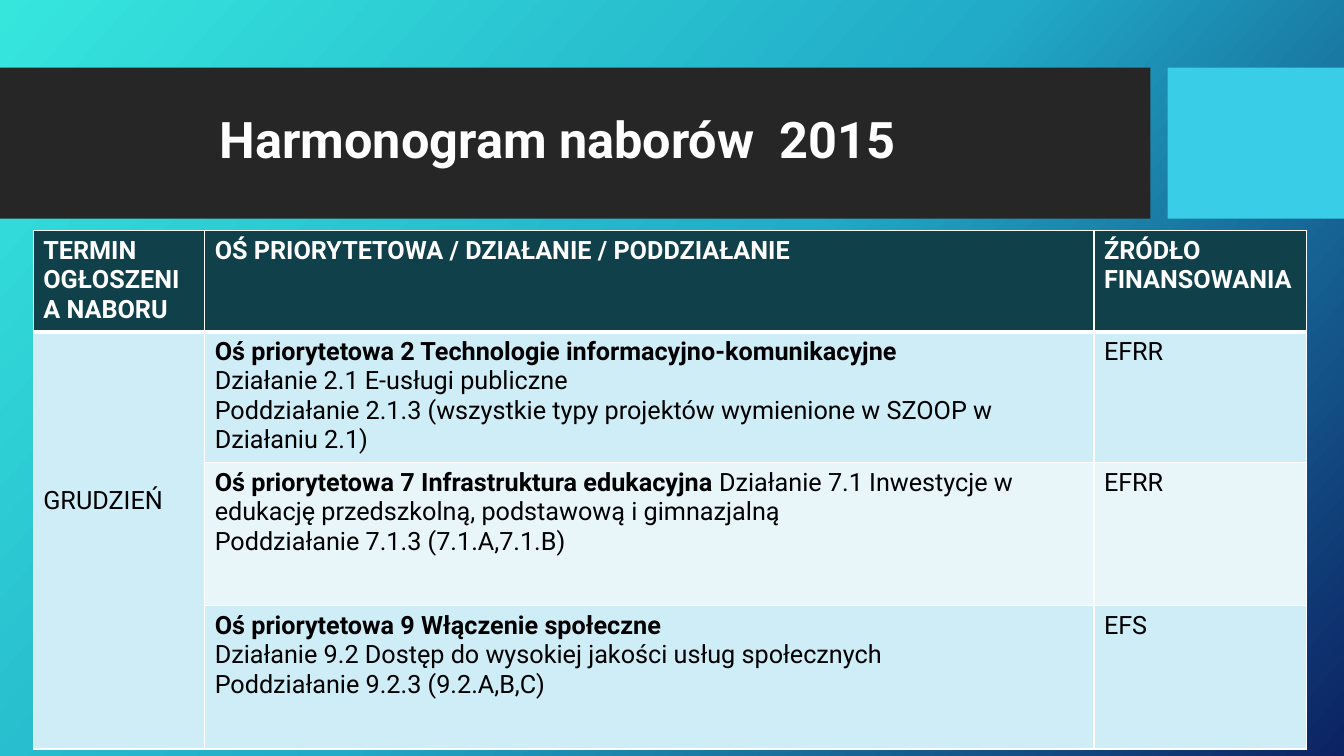
from copy import deepcopy
from dataclasses import dataclass

from lxml.etree import SubElement
from pptx import Presentation
from pptx.dml.color import RGBColor
from pptx.enum.shapes import MSO_SHAPE
from pptx.enum.text import MSO_ANCHOR
from pptx.oxml import parse_xml
from pptx.oxml.ns import nsdecls, qn
from pptx.slide import Slide
from pptx.table import _Cell as Cell
from pptx.util import Inches, Pt

FONT = "Roboto"
WHITE = RGBColor(0xFF, 0xFF, 0xFF)
BLACK = RGBColor(0x00, 0x00, 0x00)
CHARCOAL = RGBColor(0x26, 0x26, 0x26)
CYAN = RGBColor(0x39, 0xCD, 0xE7)
DARK_TEAL = RGBColor(0x10, 0x40, 0x4A)
LIGHT_BLUE = RGBColor(0xCE, 0xED, 0xF6)
PALE_BLUE = RGBColor(0xE8, 0xF6, 0xFA)
BACKGROUND_STOPS = [
    (0, RGBColor(0x36, 0xE6, 0xDD)),
    (0.5, RGBColor(0x21, 0xAB, 0xC8)),
    (1, RGBColor(0x0C, 0x22, 0x63)),
]


@dataclass
class Band:
    left: float
    width: float
    color: RGBColor


@dataclass
class Call:
    axis: str
    action: str
    subaction: str
    source: str
    height: float
    color: RGBColor
    action_on_axis_line: bool = False


BANDS = [Band(0, 11.41, CHARCOAL), Band(11.58, 1.75, CYAN)]
HEADINGS = [
    "TERMIN OGŁOSZENIA NABORU",
    "OŚ PRIORYTETOWA / DZIAŁANIE / PODDZIAŁANIE",
    "ŹRÓDŁO FINANSOWANIA",
]
COLUMN_WIDTHS = [1.7, 8.82, 2.11]
HEADING_HEIGHT = 0.71
CALLS = [
    Call("Oś priorytetowa 2 Technologie informacyjno-komunikacyjne",
         "Działanie 2.1 E-usługi publiczne",
         "Poddziałanie 2.1.3 (wszystkie typy projektów wymienione w SZOOP w Działaniu 2.1)",
         "EFRR", 1.02, LIGHT_BLUE),
    Call("Oś priorytetowa 7 Infrastruktura edukacyjna ",
         "Działanie 7.1 Inwestycje w edukację przedszkolną, podstawową i gimnazjalną",
         "Poddziałanie 7.1.3 (7.1.A,7.1.B)",
         "EFRR", 1.42, PALE_BLUE, action_on_axis_line=True),
    Call("Oś priorytetowa 9 Włączenie społeczne",
         "Działanie 9.2 Dostęp do wysokiej jakości usług społecznych",
         "Poddziałanie 9.2.3 (9.2.A,B,C)",
         "EFS", 1.42, LIGHT_BLUE),
]


def paint_background(slide: Slide) -> None:
    fill = slide.background.fill
    fill.gradient()
    fill.gradient_angle = 360 - 42
    stop_list = next(slide.element.iter(qn("a:gsLst")))
    stop_list.append(deepcopy(stop_list[-1]))
    for stop, (position, color) in zip(fill.gradient_stops, BACKGROUND_STOPS):
        stop.position = position
        stop.color.rgb = color


def add_band(slide: Slide, band: Band) -> None:
    bar = slide.shapes.add_shape(
        MSO_SHAPE.RECTANGLE, Inches(band.left), Inches(0.67), Inches(band.width), Inches(1.5))
    bar.shadow.inherit = False
    bar.fill.solid()
    bar.fill.fore_color.rgb = band.color
    bar.line.fill.background()


def add_title(slide: Slide, text: str) -> None:
    title = slide.shapes.add_textbox(Inches(0.74), Inches(0.82), Inches(10.51), Inches(1.18))
    frame = title.text_frame
    frame.word_wrap = True
    frame.vertical_anchor = MSO_ANCHOR.MIDDLE
    frame.margin_left = Inches(1.44)
    paragraph = frame.paragraphs[0]
    paragraph.text = text
    paragraph.line_spacing = 0.9
    style_font(paragraph.font, 36, WHITE, True)


def style_font(font, size: float, color: RGBColor, bold: bool) -> None:
    font.name = FONT
    font.size = Pt(size)
    font.color.rgb = color
    font.bold = bold


def set_borders(cell: Cell, top: float, bottom: float) -> None:
    properties = cell._tc.get_or_add_tcPr()
    widths = {"lnL": 1, "lnR": 1, "lnT": top, "lnB": bottom}
    for index, (side, width) in enumerate(widths.items()):
        border = parse_xml(f'<a:{side} {nsdecls("a")} w="{Pt(width)}"/>')
        fill = SubElement(border, qn("a:solidFill"))
        SubElement(fill, qn("a:srgbClr"), val=str(WHITE))
        properties.insert(index, border)


def fill_cell(cell: Cell, lines: list[str], background: RGBColor,
              color: RGBColor = BLACK, bold_first: bool = False) -> None:
    cell.fill.solid()
    cell.fill.fore_color.rgb = background
    cell.text = "\n".join(lines)
    for index, paragraph in enumerate(cell.text_frame.paragraphs):
        style_font(paragraph.font, 18, color, bold_first and index == 0)


def fill_call_cell(cell: Cell, call: Call) -> None:
    if not call.action_on_axis_line:
        fill_cell(cell, [call.axis, call.action, call.subaction], call.color, bold_first=True)
        return
    fill_cell(cell, [call.axis, call.subaction], call.color, bold_first=True)
    action = cell.text_frame.paragraphs[0].add_run()
    action.text = call.action
    style_font(action.font, 18, BLACK, False)


def add_schedule(slide: Slide) -> None:
    heights = [HEADING_HEIGHT] + [call.height for call in CALLS]
    schedule = slide.shapes.add_table(
        len(heights), len(COLUMN_WIDTHS), Inches(0.33), Inches(2.29),
        Inches(sum(COLUMN_WIDTHS)), Inches(sum(heights))).table
    for column, width in zip(schedule.columns, COLUMN_WIDTHS):
        column.width = Inches(width)
    for row, height in zip(schedule.rows, heights):
        row.height = Inches(height)

    for index, heading in enumerate(HEADINGS):
        fill_cell(schedule.cell(0, index), [heading], DARK_TEAL, WHITE, bold_first=True)
    for index, call in enumerate(CALLS, start=1):
        fill_call_cell(schedule.cell(index, 1), call)
        fill_cell(schedule.cell(index, 2), [call.source], call.color)

    month = schedule.cell(1, 0)
    month.merge(schedule.cell(len(CALLS), 0))
    fill_cell(month, ["GRUDZIEŃ"], LIGHT_BLUE)
    month.margin_top = Inches(1.53)

    for index, row in enumerate(schedule.rows):
        for cell in row.cells:
            set_borders(cell, top=3 if index == 1 else 1, bottom=3 if index == 0 else 1)


def main() -> None:
    presentation = Presentation()
    presentation.slide_width = Inches(13.33)
    presentation.slide_height = Inches(7.5)
    slide = presentation.slides.add_slide(presentation.slide_layouts[6])
    paint_background(slide)
    for band in BANDS:
        add_band(slide, band)
    add_title(slide, "Harmonogram naborów  2015")
    add_schedule(slide)
    presentation.save("out.pptx")


if __name__ == "__main__":
    main()
